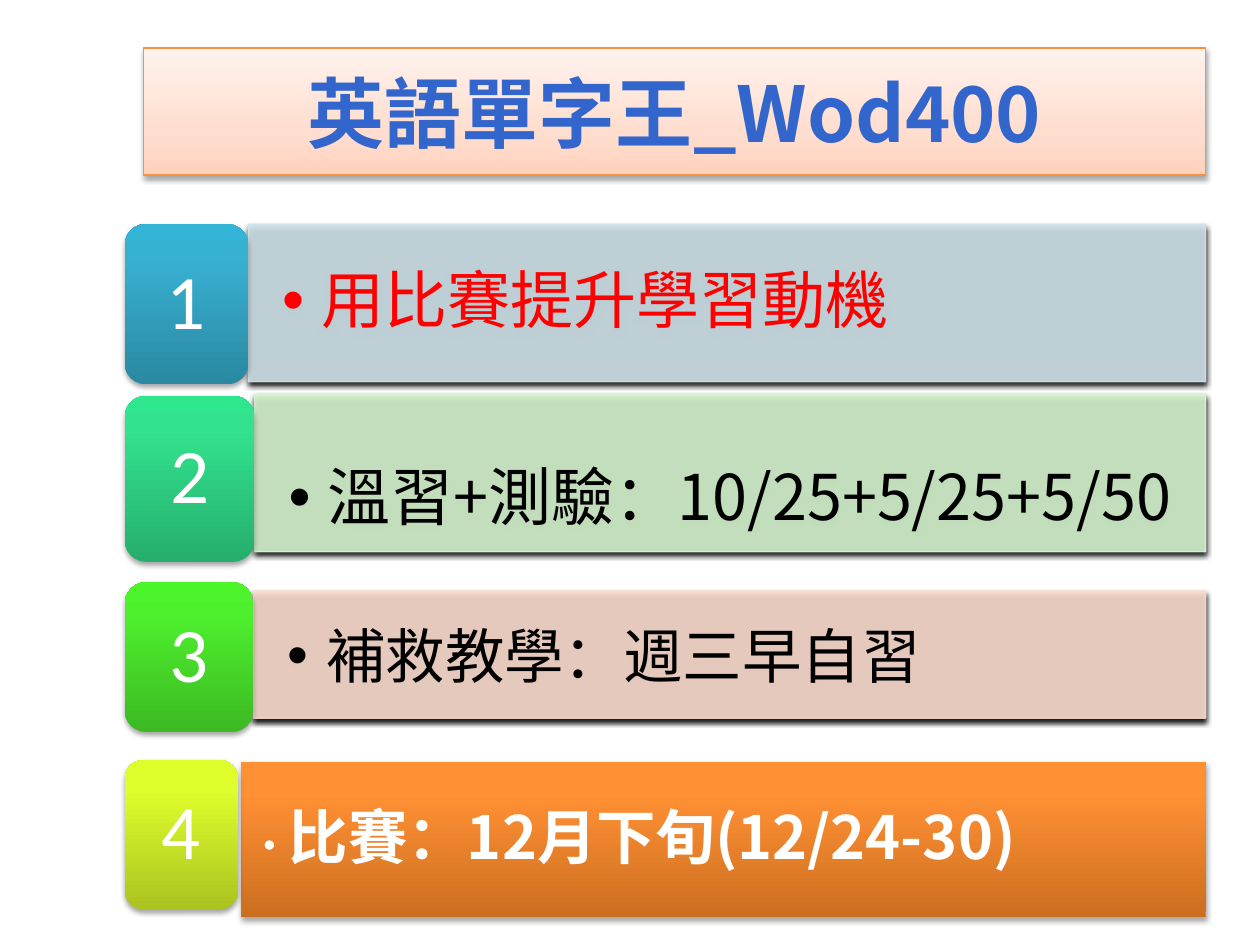
from copy import deepcopy
from dataclasses import dataclass

from lxml import etree
from pptx import Presentation
from pptx.dml.color import RGBColor
from pptx.enum.shapes import MSO_SHAPE
from pptx.enum.text import MSO_ANCHOR, MSO_AUTO_SIZE, PP_ALIGN
from pptx.oxml.ns import qn
from pptx.util import Inches, Pt

RECTANGLE, ROUNDED = MSO_SHAPE.RECTANGLE, MSO_SHAPE.ROUNDED_RECTANGLE
MIDDLE, BOTTOM = MSO_ANCHOR.MIDDLE, MSO_ANCHOR.BOTTOM
LEFT, CENTER = PP_ALIGN.LEFT, PP_ALIGN.CENTER
TITLE_ONLY = 5


@dataclass(frozen=True)
class Theme:
    text_font: str = "Noto Sans CJK SC"
    number_font: str = "Calibri"
    title_size: int = 44
    number_size: int = 44
    title_color: str = "3366CC"
    title_line: str = "F69240"
    title_fill: tuple = ((0, "FFD2BD"), (35, "FFDED0"), (100, "FFF2ED"))
    final_fill: tuple = ((0, "CC6E20"), (80, "FF9034"), (100, "FF9136"))
    red: str = "FF0000"
    black: str = "000000"
    white: str = "FFFFFF"
    bar_opacity: int = 90
    shadow_opacity: int = 35


THEME = Theme()


@dataclass(frozen=True)
class Step:
    text: str
    size: int
    color: str
    badge_box: tuple
    bar_box: tuple
    badge_fill: tuple
    bar_color: str = ""  # empty for the highlighted last step
    anchor: MSO_ANCHOR = MIDDLE
    line_spacing: float = 0.9


STEPS = (
    Step("用比賽提升學習動機", 36, THEME.red,
         (0.99, 1.78, 0.98, 1.27), (1.97, 1.78, 7.6, 1.25),
         ((0, "2A88A2"), (80, "37B1D2"), (100, "34B4D6")), "D0E3EA"),
    Step("溫習+測驗：10/25+5/25+5/50", 36, THEME.black,
         (0.99, 3.14, 1.03, 1.32), (2.02, 3.13, 7.55, 1.25),
         ((0, "26AE6D"), (80, "32E28D"), (100, "2EE68E")), "D6F4CE", BOTTOM),
    Step("補救教學：週三早自習", 34, THEME.black,
         (0.99, 4.62, 1.02, 1.19), (2.01, 4.69, 7.56, 1.01),
         ((0, "3CB923"), (80, "4EF02E"), (100, "4CF52A")), "FCDDCF",
         line_spacing=1.0),
    Step("比賽：12月下旬(12/24-30)", 34, THEME.white,
         (0.99, 6.03, 0.9, 1.19), (1.91, 6.05, 7.66, 1.23),
         ((0, "ACC321"), (80, "DFFD2B"), (100, "E1FF2B"))),
)


def color_of(value):
    return RGBColor.from_string(value)


def fill_gradient(shape, stops):
    """Fill with a bottom-to-top gradient of any number of stops."""
    shape.fill.gradient()
    shape.fill.gradient_angle = 90
    stop_list = shape.fill.gradient_stops[0]._gs.getparent()
    while len(stop_list) < len(stops):
        stop_list.append(deepcopy(stop_list[0]))
    for stop, (position, color) in zip(shape.fill.gradient_stops, stops):
        stop.position = position / 100
        stop.color.rgb = color_of(color)


def fill_translucent(shape, color):
    """Give fill and outline one partly transparent colour."""
    shape.fill.solid()
    shape.fill.fore_color.rgb = color_of(color)
    shape.line.color.rgb = color_of(color)
    shape.line.width = Pt(0.75)
    for color_element in shape._element.spPr.iter(qn("a:srgbClr")):
        etree.SubElement(color_element, qn("a:alpha"),
                         val=str(THEME.bar_opacity * 1000))


def add_shadow(shape):
    shape.shadow.inherit = False
    effects = shape._element.spPr.find(qn("a:effectLst"))
    shadow = etree.SubElement(
        effects, qn("a:outerShdw"), blurRad=str(Pt(3.1)), dist=str(Pt(1.8)),
        dir="5400000", rotWithShape="0")
    color = etree.SubElement(shadow, qn("a:srgbClr"), val=THEME.black)
    etree.SubElement(color, qn("a:alpha"), val=str(THEME.shadow_opacity * 1000))


def format_run(run, font_name, size, color, bold=False):
    font = run.font
    font.name, font.size, font.bold = font_name, Pt(size), bold
    font.color.rgb = color_of(color)
    latin = run._r.rPr.find(qn("a:latin"))
    latin.addnext(latin.makeelement(qn("a:ea"), {"typeface": font_name}))


def set_frame(shape, anchor, horizontal, vertical):
    frame = shape.text_frame
    frame.word_wrap = True
    frame.auto_size = MSO_AUTO_SIZE.NONE
    frame.vertical_anchor = anchor
    frame.margin_left = frame.margin_right = Inches(horizontal)
    frame.margin_top = frame.margin_bottom = Inches(vertical)
    return frame.paragraphs[0]


def set_paragraph(paragraph, alignment, line_spacing, space_after):
    paragraph.alignment = alignment
    paragraph.line_spacing = line_spacing
    paragraph.space_after = Pt(space_after)


def add_bullet(paragraph):
    properties = paragraph._p.get_or_add_pPr()
    properties.set("marL", str(Inches(0.31)))
    properties.set("indent", str(-Inches(0.31)))
    etree.SubElement(properties, qn("a:buFont"), typeface="Arial")
    etree.SubElement(properties, qn("a:buChar"), char="•")


def add_block(slide, preset, box):
    shape = slide.shapes.add_shape(preset, *map(Inches, box))
    shape.line.fill.background()
    add_shadow(shape)
    return shape


def place_title(slide, box):
    title = slide.shapes.title
    title.left, title.top, title.width, title.height = map(Inches, box)
    fill_gradient(title, THEME.title_fill)
    title.line.color.rgb = color_of(THEME.title_line)
    title.line.width = Pt(0.75)
    add_shadow(title)
    paragraph = set_frame(title, MIDDLE, 0.1, 0.05)
    paragraph.text = "英語單字王_Wod400"
    paragraph.alignment = CENTER
    format_run(paragraph.runs[0], THEME.text_font, THEME.title_size,
               THEME.title_color, bold=True)


def add_badge(slide, box, number, stops):
    badge = add_block(slide, ROUNDED, box)
    fill_gradient(badge, stops)
    paragraph = set_frame(badge, MIDDLE, 0.18, 0.09)
    paragraph.text = str(number)
    set_paragraph(paragraph, CENTER, 0.9, 0.35 * THEME.number_size)
    format_run(paragraph.runs[0], THEME.number_font, THEME.number_size,
               THEME.white)


def add_bar(slide, box, step):
    bar = add_block(slide, RECTANGLE, box)
    fill_translucent(bar, step.bar_color)
    paragraph = set_frame(bar, step.anchor, 0.27, 0.14)
    paragraph.text = step.text
    set_paragraph(paragraph, LEFT, step.line_spacing, 0.15 * step.size)
    add_bullet(paragraph)
    format_run(paragraph.runs[0], THEME.text_font, step.size, step.color)


def add_final_bar(slide, box, step):
    bar = add_block(slide, RECTANGLE, box)
    fill_gradient(bar, THEME.final_fill)
    paragraph = set_frame(bar, MIDDLE, 0.09, 0.04)
    set_paragraph(paragraph, LEFT, step.line_spacing, 0.35 * step.size)
    for text, size in (("・", 21), (step.text, step.size)):
        run = paragraph.add_run()
        run.text = text
        format_run(run, THEME.text_font, size, step.color, bold=True)


def main():
    presentation = Presentation()
    presentation.slide_width, presentation.slide_height = Inches(10), Inches(7.5)
    slide = presentation.slides.add_slide(presentation.slide_layouts[TITLE_ONLY])
    place_title(slide, (1.14, 0.38, 8.43, 1.01))
    # Numbered steps
    for number, step in enumerate(STEPS, 1):
        place_bar = add_bar if step.bar_color else add_final_bar
        place_bar(slide, step.bar_box, step)
        add_badge(slide, step.badge_box, number, step.badge_fill)
    presentation.save("out.pptx")


if __name__ == "__main__":
    main()
